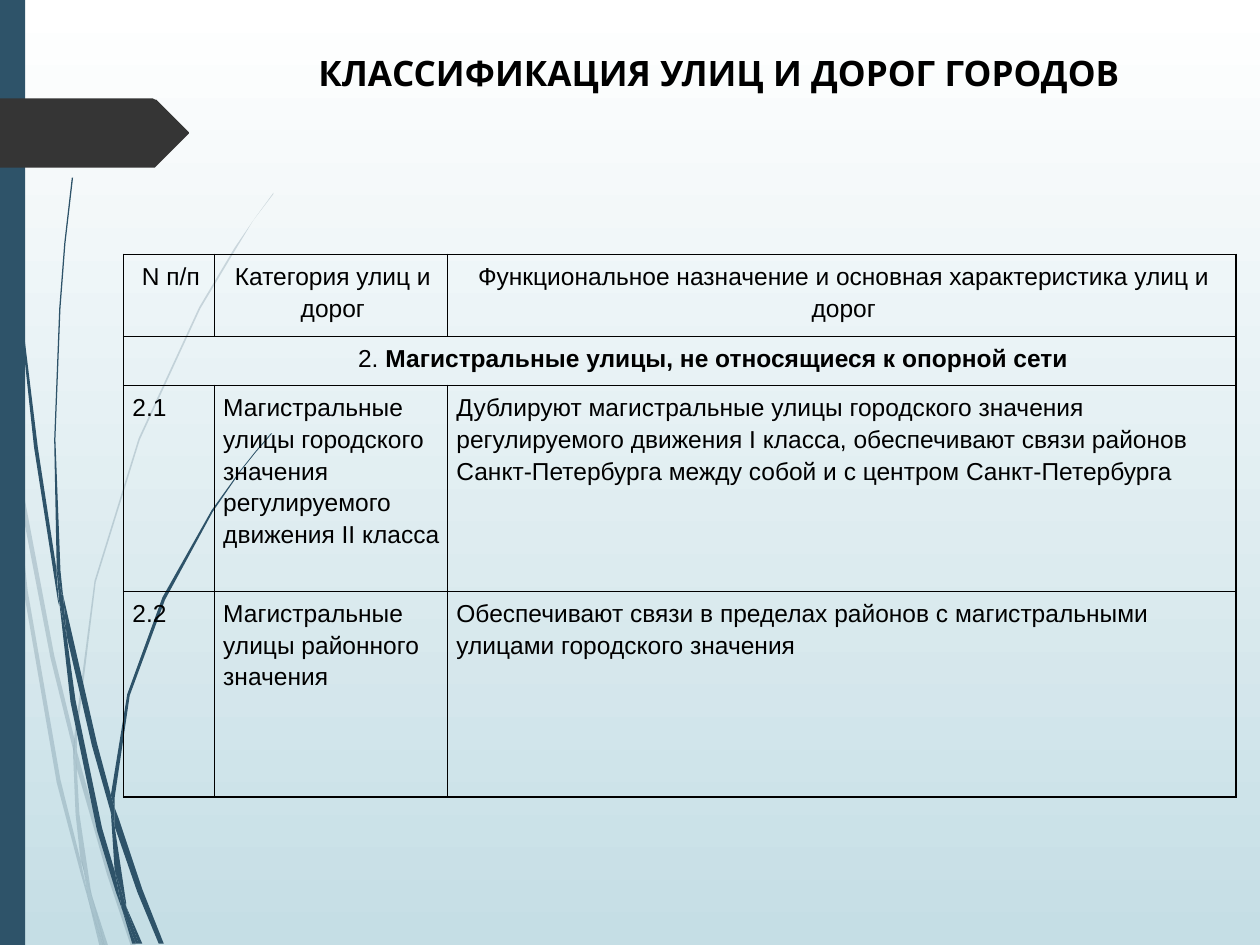
import pptx
import pptx.dml.color
import pptx.enum.shapes
import pptx.enum.text
import pptx.oxml
import pptx.oxml.ns
import pptx.util

Cm = pptx.util.Cm
Pt = pptx.util.Pt
RGBColor = pptx.dml.color.RGBColor
PP_ALIGN = pptx.enum.text.PP_ALIGN

NAVY = RGBColor(0x2E, 0x53, 0x69)
CHARCOAL = RGBColor(0x35, 0x35, 0x35)
BLACK = RGBColor(0, 0, 0)
WHITE = RGBColor(0xFF, 0xFF, 0xFF)
PALE_BLUE = RGBColor(0xC5, 0xDE, 0xE5)

OUTLINE_UNIT = Cm(2.54) / 100

PALE_STEMS = [
    [(8, 350), (6, 322), (0, 282), (0, 299), (7, 344)],
    [(40, 522), (59, 599), (59, 586), (43, 520), (10, 345), (12, 376)],
    [(64, 607), (61, 596), (61, 610), (85, 694), (104, 751), (108, 751), (88, 692)],
    [(83, 751), (86, 751), (73, 711)],
    [(64, 683), (48, 619), (22, 469), (12, 376), (8, 350), (19, 470), (45, 621),
     (64, 693), (70, 714), (69, 707)],
    [(58, 599), (60, 646), (64, 683), (67, 692), (73, 711), (72, 706), (63, 646),
     (61, 610), (61, 608)],
    [(61, 584), (76, 462), (111, 349), (159, 245), (187, 198), (201, 175), (217, 154),
     (217, 153), (201, 175), (186, 197), (158, 244), (110, 348), (75, 461), (59, 584),
     (59, 586), (61, 596)],
    [(70, 714), (79, 751), (82, 751)],
    [(61, 608), (61, 610), (61, 596), (59, 586), (58, 599)],
    [(67, 692), (65, 683), (69, 707), (70, 714), (82, 751), (83, 751), (73, 711)],
]
DARK_STEMS = [
    [(5, 110), (14, 233), (27, 355), (46, 477), (47, 481), (45, 457), (45, 453),
     (30, 355), (15, 232), (6, 109), (4, 48), (3, 0), (2, 0), (3, 48)],
    [(73, 592), (88, 645), (88, 633), (88, 631), (77, 590), (50, 472), (53, 505)],
    [(94, 649), (91, 641), (91, 656), (109, 708), (126, 749), (130, 749), (113, 706)],
    [(91, 691), (81, 657), (60, 556), (53, 505), (47, 477), (56, 557), (77, 659),
     (92, 708), (97, 722), (96, 717)],
    [(50, 472), (48, 453), (44, 349), (48, 245), (52, 193), (58, 141), (57, 141),
     (51, 193), (47, 245), (43, 349), (45, 449), (49, 472)],
    [(110, 749), (113, 749), (100, 719)],
    [(47, 477), (53, 505), (50, 472), (49, 472), (45, 449), (45, 453)],
    [(91, 633), (103, 552), (131, 476), (169, 406), (191, 374), (203, 359), (216, 344),
     (215, 344), (203, 358), (191, 373), (168, 405), (129, 474), (101, 551), (88, 631),
     (91, 641)],
    [(97, 722), (105, 749), (108, 749)],
    [(88, 645), (91, 691), (96, 706), (100, 719), (100, 716), (91, 656), (90, 651)],
    [(88, 645), (90, 651), (91, 656), (91, 641), (88, 631), (88, 633)],
    [(96, 706), (91, 691), (96, 717), (97, 722), (108, 749), (110, 749), (100, 719)],
]
ARROW_TAG = [(0, 78), (121, 78), (123, 79), (124, 79), (149, 104), (150, 105), (150, 106),
             (149, 107), (124, 132), (123, 133), (121, 133), (0, 133)]

TITLE = "КЛАССИФИКАЦИЯ УЛИЦ И ДОРОГ ГОРОДОВ"
COLUMN_WIDTHS = [1.83, 4.7, 15.9]
ROW_HEIGHTS = [1.65, 0.99, 4.15, 4.15]
HEADERS = ["N п/п", "Категория улиц и дорог",
           "Функциональное назначение и основная характеристика улиц и дорог"]
SECTION = [("2. ", False), ("Магистральные улицы, не относящиеся к опорной сети", True)]
STREETS = [
    ["2.1", "Магистральные улицы городского значения регулируемого движения II класса",
     "Дублируют магистральные улицы городского значения регулируемого движения I класса, "
     "обеспечивают связи районов Санкт-Петербурга между собой и с центром Санкт-Петербурга"],
    ["2.2", "Магистральные улицы районного значения",
     "Обеспечивают связи в пределах районов с магистральными улицами городского значения"],
]


def paint_background(slide):
    """Fill the background with a vertical gradient from white to pale blue."""
    fill = slide.background.fill
    fill.gradient()
    fill.gradient_angle = 270
    for stop, color, position in zip(fill.gradient_stops, (WHITE, PALE_BLUE), (0, 1)):
        stop.color.rgb = color
        stop.position = position


def paint_shape(shape, color, opacity=100):
    """Give a shape a plain fill without line or shadow."""
    shape.shadow.inherit = False
    shape.line.fill.background()
    shape.fill.solid()
    shape.fill.fore_color.rgb = color
    if opacity < 100:
        tint = shape.fill._xPr.find(".//" + pptx.oxml.ns.qn("a:srgbClr"))
        alpha = pptx.oxml.parse_xml(
            f'<a:alpha {pptx.oxml.ns.nsdecls("a")} val="{opacity * 1000}"/>')
        tint.append(alpha)


def add_outline(slide, points, color, opacity=100):
    """Draw a closed outline from points in hundredths of an inch."""
    builder = slide.shapes.build_freeform(*points[0], scale=OUTLINE_UNIT)
    builder.add_line_segments(points[1:], close=True)
    paint_shape(builder.convert_to_shape(), color, opacity)


def add_run(paragraph, text, size, font, bold=False):
    """Append one black run to a paragraph."""
    run = paragraph.add_run()
    run.text = text
    run.font.size = Pt(size)
    run.font.name = font
    run.font.bold = bold
    run.font.color.rgb = BLACK


def set_title(slide):
    """Place and format the slide title."""
    title = slide.shapes.title
    title.left, title.top, title.width, title.height = Cm(4.09), Cm(0.74), Cm(20.8), Cm(1.19)
    frame = title.text_frame
    frame.word_wrap = True
    frame.auto_size = pptx.enum.text.MSO_AUTO_SIZE.SHAPE_TO_FIT_TEXT
    frame.vertical_anchor = pptx.enum.text.MSO_ANCHOR.TOP
    paragraph = frame.paragraphs[0]
    paragraph.alignment = PP_ALIGN.CENTER
    paragraph.line_spacing = 1.2
    add_run(paragraph, TITLE, 20, "League Spartan", True)


def style_cell(cell):
    """Set margins, thin black borders and no fill on a cell."""
    cell.margin_left, cell.margin_top = Cm(0.18), Cm(0.1)
    cell.margin_right, cell.margin_bottom = Cm(0.1), Cm(0.18)
    properties = cell._tc.get_or_add_tcPr()
    for side in ("lnL", "lnR", "lnT", "lnB"):
        properties.append(pptx.oxml.parse_xml(
            f'<a:{side} {pptx.oxml.ns.nsdecls("a")} w="{Pt(1)}"><a:solidFill>'
            f'<a:srgbClr val="{BLACK}"/></a:solidFill></a:{side}>'))
    cell.fill.background()


def fill_cell(cell, runs, alignment=PP_ALIGN.LEFT, indent=0):
    """Write (text, bold) runs into a cell."""
    paragraph = cell.text_frame.paragraphs[0]
    paragraph.alignment = alignment
    paragraph.line_spacing = 1.15
    paragraph._p.get_or_add_pPr().set("marL", str(Cm(indent)))
    for text, bold in runs:
        add_run(paragraph, text, 14, "Arial", bold)


def add_street_table(slide):
    """Add the table of street categories."""
    table = slide.shapes.add_table(
        len(ROW_HEIGHTS), len(COLUMN_WIDTHS), Cm(2.49), Cm(5.13),
        Cm(sum(COLUMN_WIDTHS)), Cm(sum(ROW_HEIGHTS))).table
    table.first_row = table.horz_banding = False
    for column, width in zip(table.columns, COLUMN_WIDTHS):
        column.width = Cm(width)
    for row, height in zip(table.rows, ROW_HEIGHTS):
        row.height = Cm(height)
    for cell in table.iter_cells():
        style_cell(cell)
    for index, header in enumerate(HEADERS):
        fill_cell(table.cell(0, index), [(header, False)], PP_ALIGN.CENTER)
    table.cell(1, 0).merge(table.cell(1, 2))
    fill_cell(table.cell(1, 0), SECTION, PP_ALIGN.CENTER, 1.27)
    for row_index, street in enumerate(STREETS, start=2):
        for index, text in enumerate(street):
            fill_cell(table.cell(row_index, index), [(text, False)])


def main():
    """Build the slide and save it."""
    deck = pptx.Presentation()
    deck.slide_width, deck.slide_height = Cm(25.4), Cm(19.05)
    slide = deck.slides.add_slide(deck.slide_layouts[5])
    paint_background(slide)
    for stem in PALE_STEMS:
        add_outline(slide, stem, NAVY, 20)
    for stem in DARK_STEMS:
        add_outline(slide, stem, NAVY)
    side_bar = slide.shapes.add_shape(
        pptx.enum.shapes.MSO_SHAPE.RECTANGLE, 0, 0, Cm(0.51), deck.slide_height)
    paint_shape(side_bar, NAVY)
    add_outline(slide, ARROW_TAG, CHARCOAL)
    set_title(slide)
    add_street_table(slide)
    deck.save("out.pptx")


if __name__ == "__main__":
    main()
